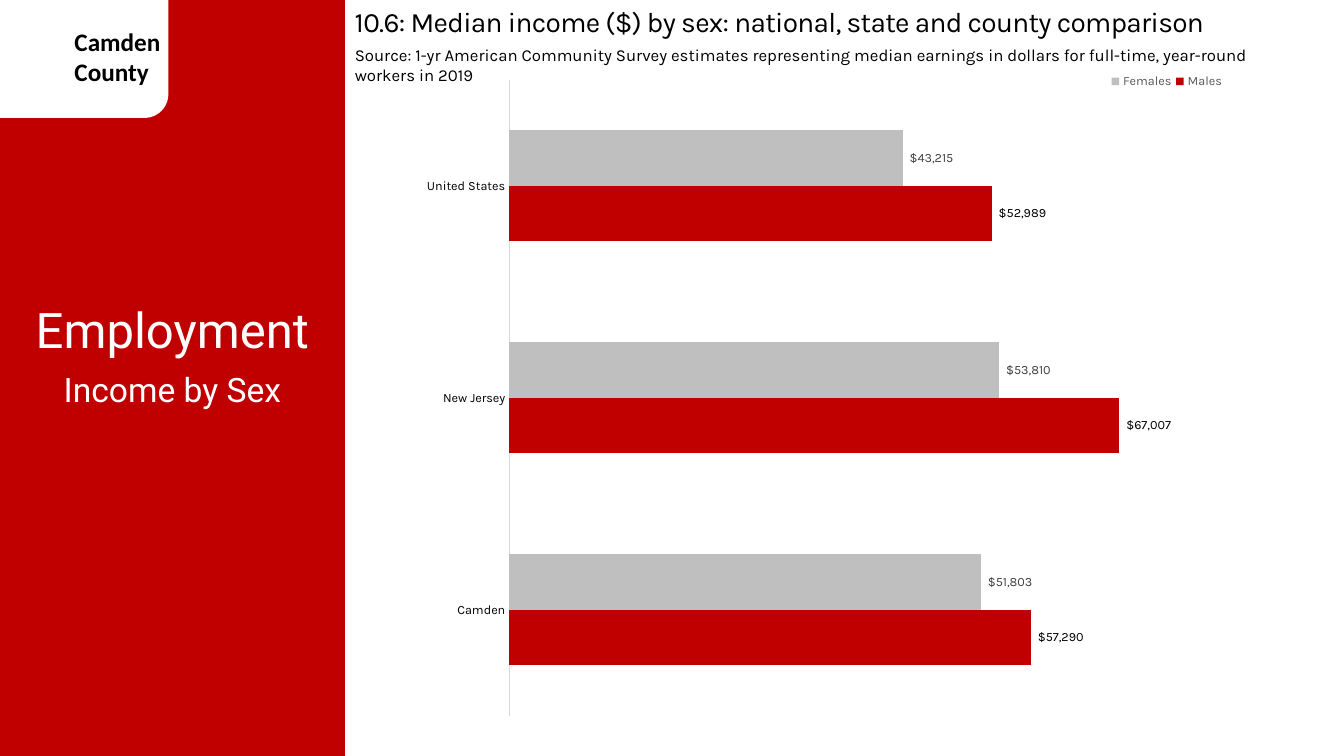
from lxml import etree
from pptx import Presentation
from pptx.chart.data import CategoryChartData
from pptx.dml.color import RGBColor
from pptx.enum.chart import (XL_CHART_TYPE, XL_LABEL_POSITION,
                             XL_LEGEND_POSITION, XL_TICK_MARK)
from pptx.enum.shapes import MSO_SHAPE
from pptx.enum.text import PP_ALIGN
from pptx.oxml.ns import qn
from pptx.util import Inches, Pt

RED, GREY, WHITE, BLACK = "C00000", "BFBFBF", "FFFFFF", "000000"
SIDEBAR_WIDTH = 3.42
DOLLARS = r'_("$"* #,##0_);_("$"* \(#,##0\);_("$"* "-"??_);_(@_)'
REGIONS = ["Camden", "New Jersey", "United States"]
EARNINGS = [
    # sex, median earnings by region, bar colour, label colour
    ("Males", [57290, 67007, 52989], RED, BLACK),
    ("Females", [51803, 53810, 43215], GREY, "404040"),
]


def rgb(colour):
    return RGBColor.from_string(colour)


def style_font(font, colour, **values):
    font.color.rgb = rgb(colour)
    for name, value in values.items():
        setattr(font, name, value)


def add_panel(slide, kind, left, top, width, height, colour):
    panel = slide.shapes.add_shape(kind, Inches(left), Inches(top),
                                   Inches(width), Inches(height))
    panel.shadow.inherit = False
    panel.fill.solid()
    panel.fill.fore_color.rgb = rgb(colour)
    panel.line.fill.background()


def add_text(slide, box, lines, size, face, colour=BLACK,
             align=PP_ALIGN.LEFT, bold=False, spacing=None):
    """Write one paragraph per line; spacing is in hundredths of a point."""
    frame = slide.shapes.add_textbox(*map(Inches, box)).text_frame
    frame.word_wrap = True
    for index, line in enumerate(lines):
        paragraph = frame.add_paragraph() if index else frame.paragraphs[0]
        paragraph.alignment = align
        run = paragraph.add_run()
        run.text = line
        style_font(run.font, colour, size=Pt(size), name=face, bold=bold)
        if spacing is not None:
            run.font._element.set("spc", str(spacing))


def set_layout(parent, before, inner=False, **fractions):
    """Place a plot area or legend by fractions of the chart's size."""
    for old in parent.findall(qn("c:layout")):
        parent.remove(old)
    layout = etree.Element(qn("c:layout"))
    manual = etree.SubElement(layout, qn("c:manualLayout"))
    settings = {"layoutTarget": "inner"} if inner else {}
    settings |= {"xMode": "edge", "yMode": "edge", **fractions}
    for name, value in settings.items():
        etree.SubElement(manual, qn(f"c:{name}")).set("val", str(value))
    parent.insert(before, layout)


def style_axes(chart):
    regions, dollars = chart.category_axis, chart.value_axis
    regions.major_tick_mark = regions.minor_tick_mark = XL_TICK_MARK.NONE
    regions.format.line.color.rgb = rgb("D9D9D9")
    regions.format.line.width = Pt(0.75)
    style_font(regions.tick_labels.font, BLACK, size=Pt(9), name="Karla")
    axis_values = {"minimum_scale": 0, "maximum_scale": 80000,
                   "has_major_gridlines": False, "visible": False}
    for name, value in axis_values.items():
        setattr(dollars, name, value)


def style_series(series, bar_colour, label_colour):
    series.format.fill.solid()
    series.format.fill.fore_color.rgb = rgb(bar_colour)
    labels = series.data_labels
    label_values = {"show_value": True, "number_format": DOLLARS,
                    "number_format_is_linked": False,
                    "position": XL_LABEL_POSITION.OUTSIDE_END}
    for name, value in label_values.items():
        setattr(labels, name, value)
    style_font(labels.font, label_colour, size=Pt(9), name="Karla")


def add_earnings_chart(slide):
    data = CategoryChartData(number_format=DOLLARS)
    data.categories = REGIONS
    for sex, earnings, *_ in EARNINGS:
        data.add_series(sex, earnings)
    chart = slide.shapes.add_chart(
        XL_CHART_TYPE.BAR_CLUSTERED, Inches(3.95), Inches(0.64),
        Inches(8.47), Inches(6.69), data).chart
    chart.has_title = False
    style_font(chart.font, BLACK, size=Pt(10), name="Calibri")
    style_axes(chart)

    plot = chart.plots[0]
    plot.gap_width = 182
    plot.overlap = 0
    plot.vary_by_categories = False
    for series, (_, _, bar_colour, label_colour) in zip(plot.series, EARNINGS):
        style_series(series, bar_colour, label_colour)

    chart.has_legend = True
    legend = chart.legend
    legend.position = XL_LEGEND_POSITION.BOTTOM
    legend.include_in_layout = False
    style_font(legend.font, "595959", size=Pt(9), name="Karla")
    set_layout(legend._element, 1, x=0.83, y=0.01, w=0.14, h=0.03)
    plot_area = chart._chartSpace.chart.plotArea
    set_layout(plot_area, 0, inner=True, x=0.13, y=0.023, w=0.853, h=0.943)


def main():
    deck = Presentation()
    deck.slide_width, deck.slide_height = Inches(13.33), Inches(7.5)
    slide = deck.slides.add_slide(deck.slide_layouts[6])

    add_panel(slide, MSO_SHAPE.RECTANGLE, 0, 0, SIDEBAR_WIDTH, 7.5, RED)
    add_panel(slide, MSO_SHAPE.ROUNDED_RECTANGLE, -0.33, -0.25, 2, 1.42, WHITE)
    add_text(slide, (0.64, 0.21, 1.17, 0.71), ["Camden", "County"],
             18, "Calibri", bold=True)
    add_text(slide, (0, 2.92, SIDEBAR_WIDTH, 0.69), ["Employment"],
             35, "Roboto", WHITE, PP_ALIGN.CENTER)
    add_text(slide, (0, 3.61, SIDEBAR_WIDTH, 0.5), ["Income by Sex"],
             24, "Roboto", WHITE, PP_ALIGN.CENTER)
    add_text(slide, (SIDEBAR_WIDTH, 0, 9.86, 0.44),
             ["10.6: Median income ($) by sex: national, state and county "
              "comparison"], 20, "Karla", spacing=-50)
    add_text(slide, (SIDEBAR_WIDTH, 0.39, 9.19, 0.5),
             ["Source: 1-yr American Community Survey estimates representing "
              "median earnings in dollars for full-time, year-round workers "
              "in 2019"], 12, "Karla")
    add_earnings_chart(slide)
    deck.save("out.pptx")


if __name__ == "__main__":
    main()
